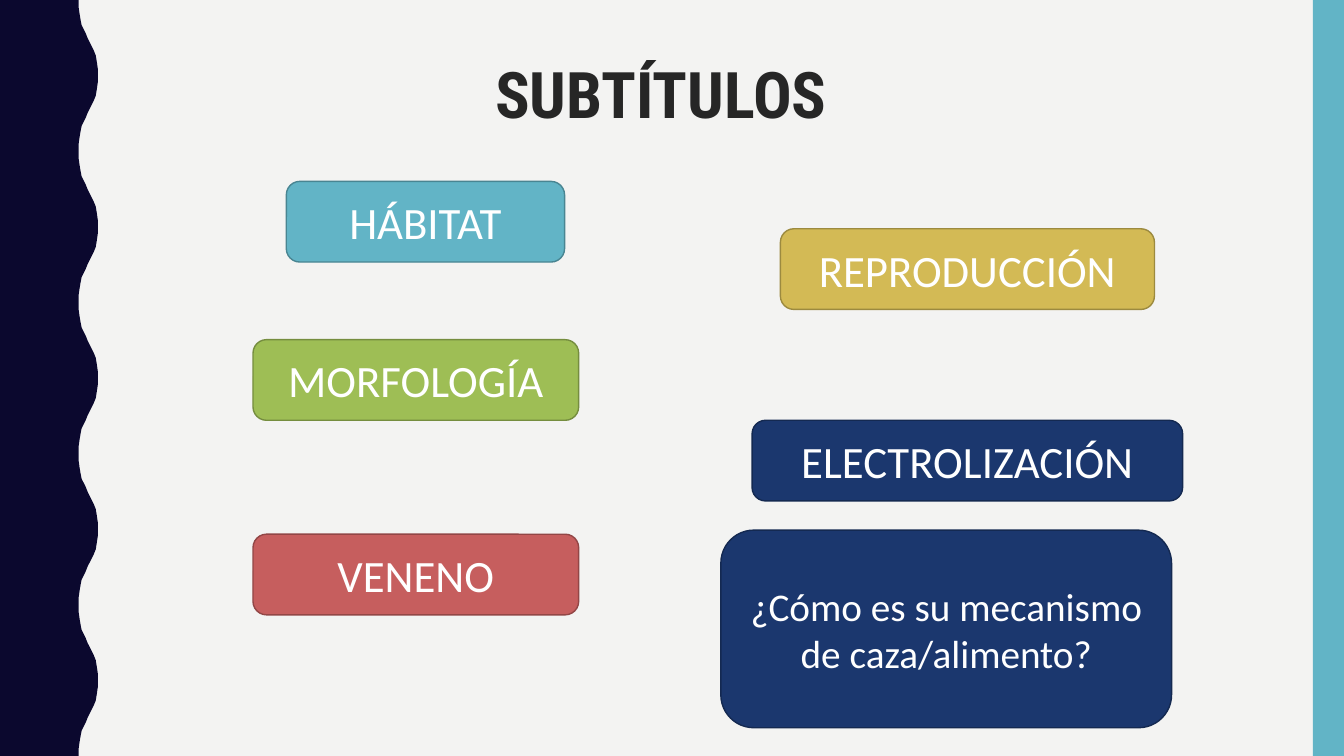
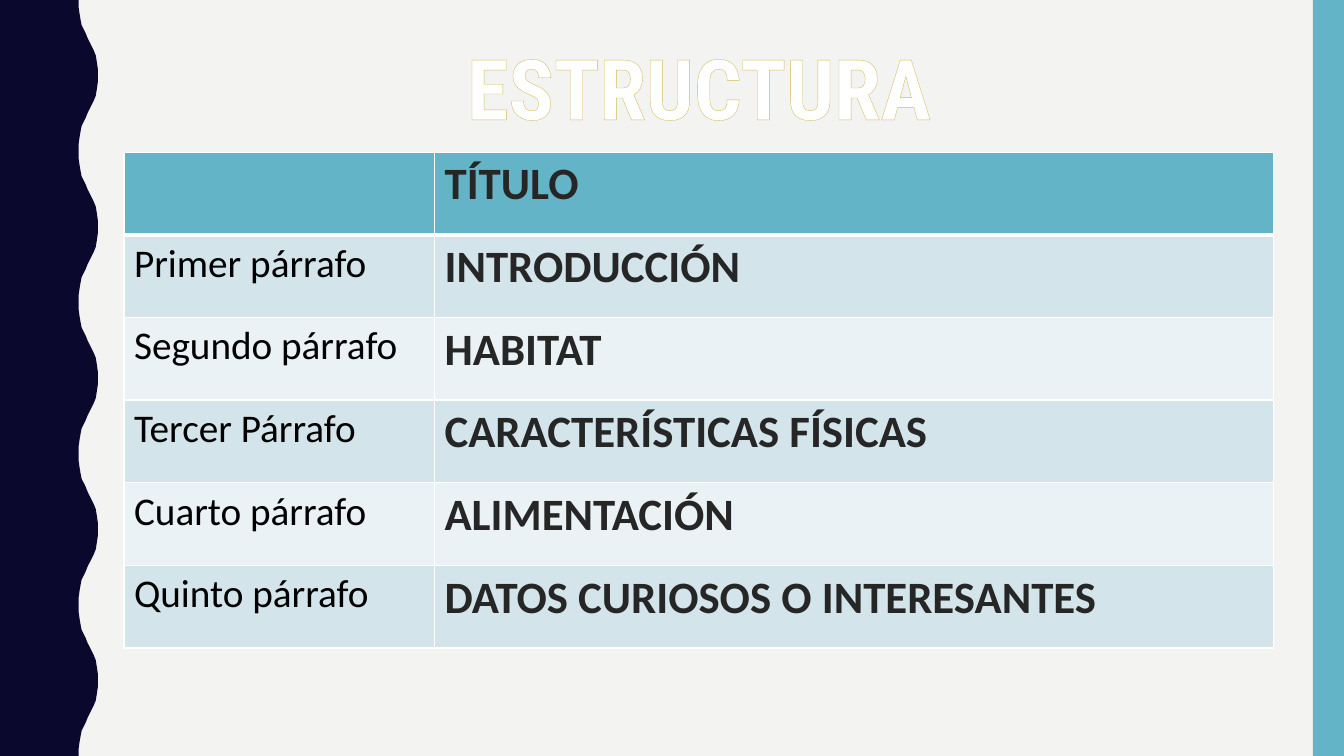
from lxml.etree import SubElement
from pptx import Presentation
from pptx.dml.color import RGBColor
from pptx.enum.shapes import MSO_SHAPE
from pptx.enum.text import MSO_ANCHOR, PP_ALIGN
from pptx.oxml.ns import qn
from pptx.util import Inches, Pt

WHITE, INK, TEAL, NAVY, GOLD = "FFFFFF", "262626", "62B4C6", "1B376E", "D3BA55"
PAPER, NIGHT = "F3F3F2", "0B082E"
BODY, HEAD = "Calibri", "Roboto Condensed"
WIDE, HIGH = 13.33, 7.5
PERIOD = 1.5
CURVE = [(0.78, 0), (0.78, 0.07), (0.79, 0.14), (0.8, 0.2), (0.81, 0.25),
         (0.83, 0.29), (0.85, 0.33), (0.87, 0.38), (0.89, 0.42), (0.91, 0.46),
         (0.93, 0.5), (0.95, 0.55), (0.96, 0.61), (0.97, 0.68), (0.97, 0.75)]

TOPICS = [
    ("HÁBITAT", (2.84, 1.8, 2.76, 0.8), 32, TEAL, "498592"),
    ("MORFOLOGÍA", (2.51, 3.37, 3.23, 0.8), 32, "9EBE55", "758D3F"),
    ("VENENO", (2.51, 5.3, 3.23, 0.8), 32, "C65E5E", "924646"),
    ("REPRODUCCIÓN", (7.74, 2.27, 3.71, 0.8), 32, GOLD, "9C8A3F"),
    ("ELECTROLIZACIÓN", (7.46, 4.17, 4.27, 0.8), 32, NAVY, "142951"),
    ("¿Cómo es su mecanismo de caza/alimento?", (7.15, 5.26, 4.47, 1.96), 28,
     NAVY, "142951"),
]
ROWS = [
    ("", "TÍTULO"),
    ("Primer párrafo", "INTRODUCCIÓN"),
    ("Segundo párrafo", "HABITAT"),
    ("Tercer Párrafo", "CARACTERÍSTICAS FÍSICAS"),
    ("Cuarto párrafo", "ALIMENTACIÓN"),
    ("Quinto párrafo", "DATOS CURIOSOS O INTERESANTES"),
]
COLS = (3.08, 8.32)
ROW = 0.82
BANDS = ("EAF2F5", "D3E5EA")


def rgb(code):
    return RGBColor.from_string(code)


def place(box):
    return [Inches(n) for n in box]


def paint(shape, fill, line=None):
    shape.shadow.inherit = False
    shape.fill.solid()
    shape.fill.fore_color.rgb = rgb(fill)
    if line:
        shape.line.color.rgb = rgb(line)
        shape.line.width = Pt(1)
    else:
        shape.line.fill.background()


def stroke(owner, tag, color, width):
    line = SubElement(owner, qn(tag), w=str(Pt(width)))
    SubElement(SubElement(line, qn("a:solidFill")), qn("a:srgbClr"), val=color)


def write(frame, text, size, color, face=BODY, bold=False, align=None, edge=None):
    para = frame.paragraphs[0]
    para.alignment = align
    font = para.font
    font.name, font.size, font.bold = face, Pt(size), bold
    font.color.rgb = rgb(color)
    run = para.add_run()
    run.text = text
    if edge:
        stroke(run.font._element, "a:ln", *edge)
    return para


def start(deck):
    slide = deck.slides.add_slide(deck.slide_layouts[6])
    wave = [(0, 0)]
    for turn in range(int(HIGH / PERIOD)):
        top = turn * PERIOD
        wave += [(x, top + y) for x, y in CURVE]
        wave += [(x, top + PERIOD - y) for x, y in CURVE[-2::-1]]
    wave.append((0, HIGH))
    points = [place(point) for point in wave]
    pen = slide.shapes.build_freeform(*points[0])
    pen.add_line_segments(points[1:], close=True)
    paint(pen.convert_to_shape(), NIGHT)
    band = slide.shapes.add_shape(MSO_SHAPE.RECTANGLE, *place((13.02, 0, 0.31, HIGH)))
    paint(band, TEAL)
    return slide


def title(slide, text, left, top, size, color, edge):
    frame = slide.shapes.add_textbox(*place((left, top, 11.13, 0.93))).text_frame
    frame.word_wrap = True
    para = write(frame, text, size, color, HEAD, True, PP_ALIGN.CENTER, edge)
    para.line_spacing = 0.9


def topics(slide):
    for text, box, size, fill, line in TOPICS:
        card = slide.shapes.add_shape(MSO_SHAPE.ROUNDED_RECTANGLE, *place(box))
        paint(card, fill, line)
        card.text_frame.word_wrap = True
        card.text_frame.vertical_anchor = MSO_ANCHOR.MIDDLE
        write(card.text_frame, text, size, WHITE, align=PP_ALIGN.CENTER)


def outline(slide):
    box = place((1.23, 1.51, sum(COLS), ROW * len(ROWS)))
    table = slide.shapes.add_table(len(ROWS), len(COLS), *box).table
    for col, width in zip(table.columns, COLS):
        col.width = Inches(width)
    for r, texts in enumerate(ROWS):
        table.rows[r].height = Inches(ROW)
        for c, text in enumerate(texts):
            cell = table.cell(r, c)
            props = cell._tc.get_or_add_tcPr()
            for side in "LRTB":
                thick = (r, side) in ((0, "B"), (1, "T"))
                stroke(props, "a:ln" + side, WHITE, 3 if thick else 1)
            cell.fill.solid()
            cell.fill.fore_color.rgb = rgb(BANDS[r % 2] if r else TEAL)
            if text and c:
                write(cell.text_frame, text, 32, INK, bold=True, edge=(WHITE, 1.06))
            elif text:
                write(cell.text_frame, text, 28, "000000")


def main():
    """Build the two slides and save them."""
    deck = Presentation()
    deck.slide_width, deck.slide_height = place((WIDE, HIGH))
    back = deck.slide_master.background.fill
    back.solid()
    back.fore_color.rgb = rgb(PAPER)

    slide = start(deck)
    topics(slide)
    title(slide, "SUBTÍTULOS", 0.99, 0.58, 45.9, INK, (WHITE, 1.06))

    slide = start(deck)
    title(slide, "ESTRUCTURA", 1.37, 0.42, 60, WHITE, (GOLD, 0.8))
    outline(slide)
    deck.save("out.pptx")


if __name__ == "__main__":
    main()
